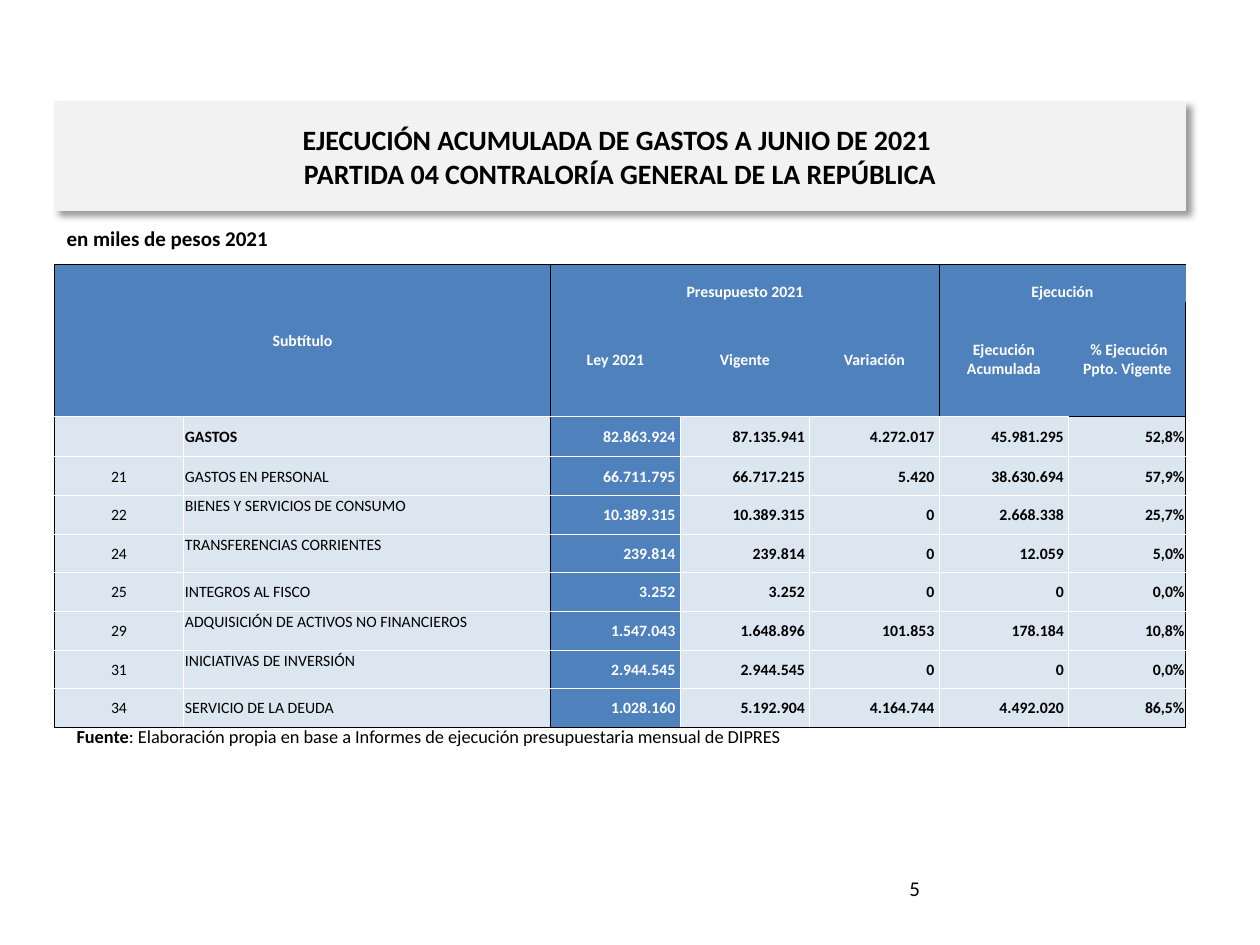
from dataclasses import dataclass
from typing import NamedTuple

from lxml import etree
from pptx import Presentation
from pptx.dml.color import RGBColor
from pptx.enum.shapes import MSO_SHAPE
from pptx.enum.text import MSO_ANCHOR, PP_ALIGN
from pptx.oxml.ns import qn
from pptx.util import Pt

RECTANGLE = MSO_SHAPE.RECTANGLE
TOP, MIDDLE, BOTTOM = MSO_ANCHOR.TOP, MSO_ANCHOR.MIDDLE, MSO_ANCHOR.BOTTOM
LEFT, CENTER, RIGHT = PP_ALIGN.LEFT, PP_ALIGN.CENTER, PP_ALIGN.RIGHT


@dataclass(frozen=True)
class Theme:
    font: str = "Calibri"
    black: str = "000000"
    white: str = "FFFFFF"
    banner: str = "F2F2F2"
    blue: str = "4F81BD"
    pale: str = "DCE6F1"
    title_size: float = 16
    body_size: float = 12
    source_size: float = 10.5
    table_size: float = 9
    border: float = 0.5


class Heading(NamedTuple):
    row: int
    col: int
    text: str
    rows: int = 1
    cols: int = 1
    anchor: MSO_ANCHOR = MIDDLE


class Expense(NamedTuple):
    code: str
    name: str
    amounts: tuple[str, str, str, str]
    share: str
    anchor: MSO_ANCHOR = MIDDLE


class CellStyle(NamedTuple):
    fill: str
    color: str
    align: PP_ALIGN
    bold: bool = True
    anchor: MSO_ANCHOR = MIDDLE
    right_gap: float = 0.7


THEME = Theme()
HEADER_ROWS = 2
COLUMN_WIDTHS = (74, 209.7, 74, 74, 74, 74, 66.9)
LAW_COL, CURRENT_COL, VARIATION_COL, SPENT_COL, SHARE_COL = range(2, 7)

HEADINGS = (
    Heading(0, 0, "Subtítulo", rows=2, cols=2),
    Heading(0, LAW_COL, "Presupuesto 2021", cols=3, anchor=BOTTOM),
    Heading(0, SPENT_COL, "Ejecución", cols=2, anchor=BOTTOM),
    Heading(1, LAW_COL, "Ley 2021"),
    Heading(1, CURRENT_COL, "Vigente"),
    Heading(1, VARIATION_COL, "Variación"),
    Heading(1, SPENT_COL, "Ejecución Acumulada"),
    Heading(1, SHARE_COL, " % Ejecución Ppto. Vigente"),
)

EXPENSES = (
    Expense("", "GASTOS", ("82.863.924", "87.135.941", "4.272.017", "45.981.295"), "52,8%"),
    Expense("21", "GASTOS EN PERSONAL",
            ("66.711.795", "66.717.215", "5.420", "38.630.694"), "57,9%"),
    Expense("22", "BIENES Y SERVICIOS DE CONSUMO",
            ("10.389.315", "10.389.315", "0", "2.668.338"), "25,7%", TOP),
    Expense("24", "TRANSFERENCIAS CORRIENTES", ("239.814", "239.814", "0", "12.059"), "5,0%", TOP),
    Expense("25", "INTEGROS AL FISCO", ("3.252", "3.252", "0", "0"), "0,0%"),
    Expense("29", "ADQUISICIÓN DE ACTIVOS NO FINANCIEROS",
            ("1.547.043", "1.648.896", "101.853", "178.184"), "10,8%", TOP),
    Expense("31", "INICIATIVAS DE INVERSIÓN", ("2.944.545", "2.944.545", "0", "0"), "0,0%", TOP),
    Expense("34", "SERVICIO DE LA DEUDA",
            ("1.028.160", "5.192.904", "4.164.744", "4.492.020"), "86,5%"),
)
ROW_HEIGHTS = (21.6, 65.4, 23) + (22.1,) * (len(EXPENSES) - 1)


def set_font(paragraph, size: float, color: str, bold: bool | None = False) -> None:
    font = paragraph.font
    font.name, font.size, font.bold = THEME.font, Pt(size), bold
    font.color.rgb = RGBColor.from_string(color)


def add_text(slide, left: float, top: float, width: float, height: float,
             text: str, size: float, bold: bool | None = False):
    frame = slide.shapes.add_textbox(Pt(left), Pt(top), Pt(width), Pt(height)).text_frame
    frame.word_wrap = True
    paragraph = frame.paragraphs[0]
    paragraph.text = text
    set_font(paragraph, size, THEME.black, bold)
    return paragraph


def add_banner(slide, text: str) -> None:
    banner = slide.shapes.add_shape(RECTANGLE, Pt(31), Pt(58.3), Pt(646.6), Pt(61.7))
    banner.fill.solid()
    banner.fill.fore_color.rgb = RGBColor.from_string(THEME.banner)
    banner.line.color.rgb = RGBColor.from_string(THEME.banner)
    banner.line.width = Pt(0.75)
    # Soft shadow towards the lower right
    banner.shadow.inherit = False
    effects = banner.element.spPr.find(qn("a:effectLst"))
    shadow = etree.SubElement(effects, qn("a:outerShdw"), blurRad=str(Pt(4)),
                              dist=str(Pt(3)), dir=str(45 * 60000), algn="tl", rotWithShape="0")
    tint = etree.SubElement(shadow, qn("a:srgbClr"), val=THEME.black)
    etree.SubElement(tint, qn("a:alpha"), val="40000")
    frame = banner.text_frame
    frame.word_wrap = True
    frame.vertical_anchor = MIDDLE
    paragraph = frame.paragraphs[0]
    paragraph.text = text
    paragraph.alignment = CENTER
    set_font(paragraph, THEME.title_size, THEME.black, True)


def set_borders(cell, colors: dict[str, str | None]) -> None:
    properties = cell._tc.get_or_add_tcPr()
    for position, (side, color) in enumerate(colors.items()):
        line = etree.Element(qn(f"a:ln{side}"), w=str(Pt(THEME.border)))
        if color is None:
            etree.SubElement(line, qn("a:noFill"))
        else:
            fill = etree.SubElement(line, qn("a:solidFill"))
            etree.SubElement(fill, qn("a:srgbClr"), val=color)
        properties.insert(position, line)


def border_colors(row: int, col: int) -> dict[str, str | None]:
    black, white = THEME.black, THEME.white
    header = row < HEADER_ROWS
    inner = None if header else white
    left_edges = (0, LAW_COL, SPENT_COL) if header else (0, LAW_COL)
    right_edges = (1, VARIATION_COL, SHARE_COL) if header else (1, SHARE_COL)
    under_share = col == SHARE_COL
    top = {0: black, 1: None, HEADER_ROWS: black if under_share else white}.get(row, white)
    bottom = {0: None, 1: black if under_share else white, len(ROW_HEIGHTS) - 1: black}.get(row, white)
    return {
        "L": black if col in left_edges else inner,
        "R": black if col in right_edges else inner,
        "T": top,
        "B": bottom,
    }


def write_cell(cell, text: str, style: CellStyle) -> None:
    cell.margin_left = cell.margin_top = Pt(0.7)
    cell.margin_right, cell.margin_bottom = Pt(style.right_gap), Pt(0)
    cell.vertical_anchor = style.anchor
    cell.fill.solid()
    cell.fill.fore_color.rgb = RGBColor.from_string(style.fill)
    paragraph = cell.text_frame.paragraphs[0]
    paragraph.text = text
    paragraph.alignment = style.align
    set_font(paragraph, THEME.table_size, style.color, style.bold)


def add_budget_table(slide) -> None:
    table = slide.shapes.add_table(len(ROW_HEIGHTS), len(COLUMN_WIDTHS), Pt(31), Pt(151),
                                   Pt(sum(COLUMN_WIDTHS)), Pt(sum(ROW_HEIGHTS))).table
    table.first_row = table.horz_banding = False
    for column, width in zip(table.columns, COLUMN_WIDTHS):
        column.width = Pt(width)
    for row, height in zip(table.rows, ROW_HEIGHTS):
        row.height = Pt(height)

    # Header, including the cells that the merges cover
    heading_style = CellStyle(THEME.blue, THEME.white, CENTER)
    for row in range(HEADER_ROWS):
        for col in range(len(COLUMN_WIDTHS)):
            write_cell(table.cell(row, col), "", heading_style)
    for heading in HEADINGS:
        cell = table.cell(heading.row, heading.col)
        write_cell(cell, heading.text, heading_style._replace(anchor=heading.anchor))
        if heading.rows * heading.cols > 1:
            cell.merge(table.cell(heading.row + heading.rows - 1, heading.col + heading.cols - 1))

    # Expenses
    code_style = CellStyle(THEME.pale, THEME.black, CENTER, bold=False)
    amount_style = CellStyle(THEME.pale, THEME.black, RIGHT, right_gap=2.8)
    law_style = amount_style._replace(fill=THEME.blue, color=THEME.white)
    for row, expense in enumerate(EXPENSES, HEADER_ROWS):
        name_style = CellStyle(THEME.pale, THEME.black, LEFT, not expense.code, expense.anchor)
        write_cell(table.cell(row, 0), expense.code, code_style)
        write_cell(table.cell(row, 1), expense.name, name_style)
        for col, amount in enumerate(expense.amounts, LAW_COL):
            write_cell(table.cell(row, col), amount, law_style if col == LAW_COL else amount_style)
        write_cell(table.cell(row, SHARE_COL), expense.share, amount_style._replace(right_gap=0.7))

    # Borders
    for row in range(len(ROW_HEIGHTS)):
        for col in range(len(COLUMN_WIDTHS)):
            set_borders(table.cell(row, col), border_colors(row, col))


def main() -> None:
    presentation = Presentation()
    presentation.slide_width, presentation.slide_height = Pt(720), Pt(540)
    slide = presentation.slides.add_slide(presentation.slide_layouts[6])

    # Title and unit
    add_banner(slide, "EJECUCIÓN ACUMULADA DE GASTOS A JUNIO DE 2021 \v"
                      "PARTIDA 04 CONTRALORÍA GENERAL DE LA REPÚBLICA")
    add_text(slide, 31, 125.3, 648, 36, "en miles de pesos 2021", THEME.body_size, True)

    # Table, source and page number
    add_budget_table(slide)
    source = add_text(slide, 36.7, 411.1, 544.3, 28.8, "Fuente", THEME.source_size, None)
    source.runs[0].font.bold = True
    source.add_run().text = ": Elaboración propia en base a Informes de ejecución presupuestaria mensual de DIPRES"
    add_text(slide, 512.6, 496.8, 167.8, 28.8, "5", THEME.body_size)

    presentation.save("out.pptx")


if __name__ == "__main__":
    main()
